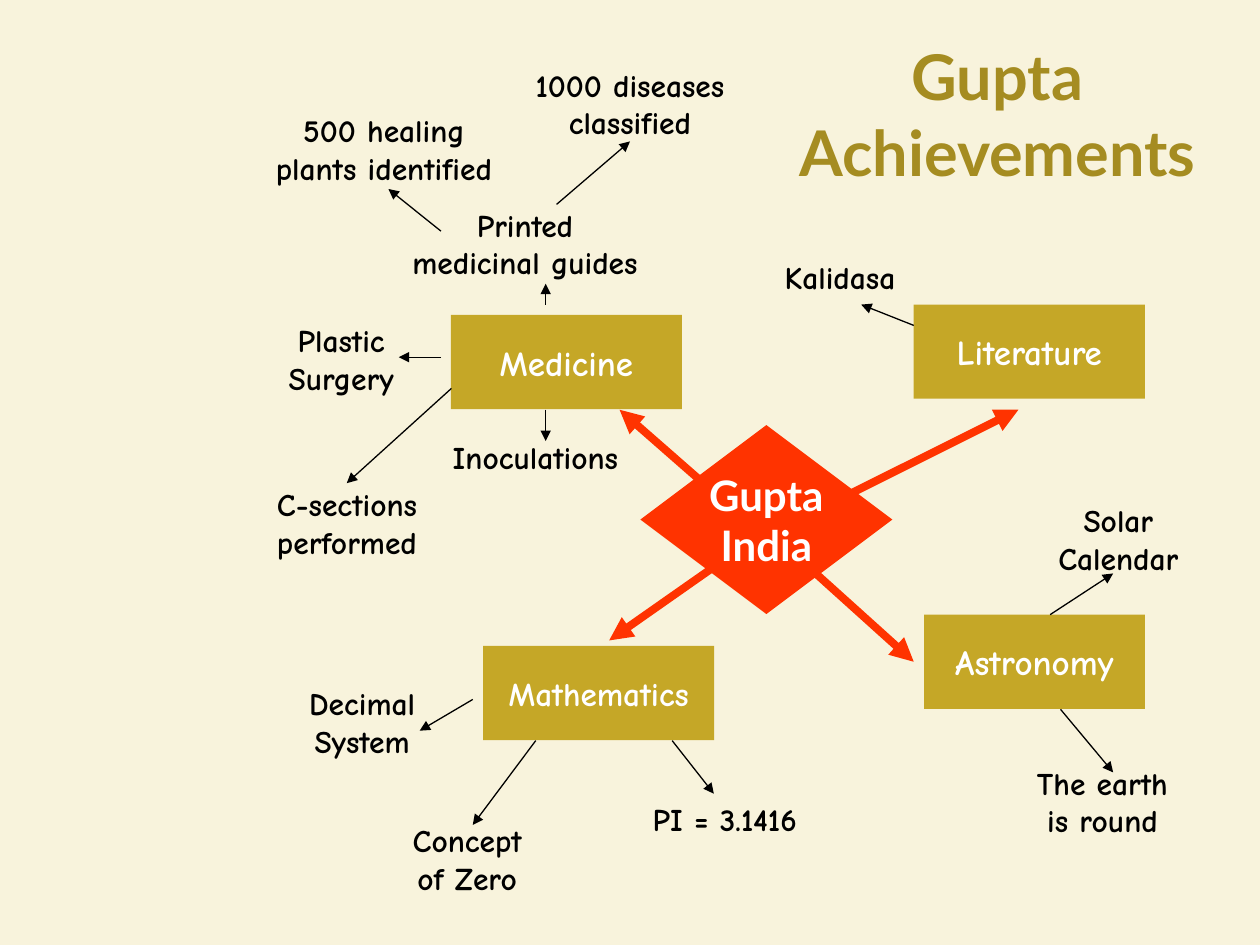
from typing import NamedTuple

from lxml.etree import SubElement
from pptx import Presentation
from pptx.dml.color import RGBColor
from pptx.enum.shapes import MSO_CONNECTOR, MSO_SHAPE
from pptx.enum.text import MSO_ANCHOR, PP_ALIGN
from pptx.oxml.ns import qn
from pptx.util import Cm, Pt

CREAM, GOLD, DARK_GOLD = "F8F3DC", "C5A727", "A58C21"
RED, WHITE, BLACK = "FF3300", "FFFFFF", "000000"
HAND, SANS = "Comic Neue", "Lato"


class Node(NamedTuple):
    """A filled shape; lengths in cm."""
    text: str
    left: float
    top: float
    width: float = 4.66
    height: float = 1.9
    size: int = 20


class Label(NamedTuple):
    """Plain text; its height follows from the number of lines."""
    text: str
    left: float
    top: float
    width: float


class Arrow(NamedTuple):
    x1: float
    y1: float
    x2: float
    y2: float


NODES = [
    Node("Medicine", 9.09, 6.35),
    Node("Literature", 18.42, 6.14),
    Node("Mathematics", 9.74, 13.02, size=19),
    Node("Astronomy", 18.63, 12.39, width=4.45),
]
HUB = Node("Gupta\nIndia", 12.91, 8.57, 5.08, 3.81, 24)

LABELS = [
    Label("Printed\nmedicinal guides", 7.41, 4.02, 6.35),
    Label("1000 diseases\nclassified", 9.95, 1.2, 5.5),
    Label("Plastic\nSurgery", 5.08, 6.35, 3.6),
    Label("C-sections\nperformed", 4.88, 9.65, 4.23),
    Label("Inoculations", 8.68, 8.71, 4.23),
    Label("500 healing\nplants identified", 4.88, 2.11, 5.72),
    Label("Decimal\nSystem", 5.5, 13.67, 3.6),
    Label("Concept\nof Zero", 7.62, 16.43, 3.6),
    Label("PI = 3.1416", 12.28, 16, 4.66),
    Label("Kalidasa", 15.24, 5.08, 3.39),
    Label("Solar\nCalendar", 20.11, 9.98, 4.87),
    Label("The earth\nis round", 20.32, 15.27, 3.81),
]

HUB_ARROWS = [
    Arrow(14.18, 9.74, 12.49, 8.26),
    Arrow(17.15, 9.95, 20.53, 8.26),
    Arrow(16.3, 11.43, 18.42, 13.34),
    Arrow(14.39, 11.43, 12.28, 12.91),
]
DETAIL_ARROWS = [
    # Medicine
    Arrow(11, 6.14, 11, 5.72),
    Arrow(8.89, 4.66, 7.83, 3.81),
    Arrow(11.22, 4.12, 12.7, 2.85),
    Arrow(8.89, 7.2, 8.04, 7.2),
    Arrow(11, 8.26, 11, 8.89),
    Arrow(9.1, 7.83, 6.99, 9.74),
    # Literature
    Arrow(18.42, 6.56, 17.36, 6.14),
    # Astronomy
    Arrow(21.17, 12.39, 22.44, 11.56),
    Arrow(21.38, 14.3, 22.44, 15.57),
    # Mathematics
    Arrow(9.53, 14.1, 8.46, 14.73),
    Arrow(10.8, 14.93, 9.53, 16.63),
    Arrow(13.55, 14.93, 14.39, 16),
]


def color(value: str) -> RGBColor:
    return RGBColor.from_string(value)


def write(tf, text: str, font: str, size: int, hue: str) -> None:
    """Fill a text frame with one centred bold paragraph."""
    p = tf.paragraphs[0]
    p.alignment = PP_ALIGN.CENTER
    p.text = text.replace("\n", "\v")
    for r in p.runs:
        for name, value in dict(name=font, size=Pt(size), bold=True).items():
            setattr(r.font, name, value)
        r.font.color.rgb = color(hue)


def add_node(s, node: Node, kind: MSO_SHAPE, fill: str, font: str) -> None:
    sp = s.shapes.add_shape(kind, *map(Cm, node[1:5]))
    sp.shadow.inherit = False
    sp.fill.solid()
    sp.fill.fore_color.rgb = color(fill)
    sp.line.fill.background()
    tf = sp.text_frame
    tf.word_wrap = False
    tf.vertical_anchor = MSO_ANCHOR.MIDDLE
    write(tf, node.text, font, node.size, WHITE)


def add_label(s, label: Label) -> None:
    height = 1.02 + 0.76 * label.text.count("\n")
    sp = s.shapes.add_textbox(*map(Cm, (*label[1:], height)))
    sp.text_frame.word_wrap = True
    write(sp.text_frame, label.text, HAND, 18, BLACK)


def add_arrow(s, arrow: Arrow, hue: str, width: float) -> None:
    sp = s.shapes.add_connector(MSO_CONNECTOR.STRAIGHT, *map(Cm, arrow))
    sp.line.color.rgb = color(hue)
    sp.line.width = Pt(width)
    SubElement(sp.line._get_or_add_ln(), qn("a:tailEnd"), type="triangle")
    SubElement(sp._element.spPr, qn("a:effectLst"))


def add_title(s, text: str) -> None:
    sp = s.shapes.add_textbox(Cm(15.24), Cm(0.64), Cm(9.74), Cm(3.33))
    tf = sp.text_frame
    tf.word_wrap = True
    write(tf, text, SANS, 36, DARK_GOLD)
    # Soft text shadow, placed right after the text fill
    effects = tf.paragraphs[0].runs[0].font._element
    effects = SubElement(effects, qn("a:effectLst"))
    effects.getprevious().getparent().find(qn("a:solidFill")).addnext(effects)
    shadow = SubElement(effects, qn("a:outerShdw"), blurRad="38100",
                        dist="38100", dir="2700000", algn="tl")
    hue = SubElement(shadow, qn("a:srgbClr"), val=BLACK)
    SubElement(hue, qn("a:alpha"), val="60000")


def main() -> None:
    prs = Presentation()
    prs.slide_width, prs.slide_height = Cm(25.4), Cm(19.05)
    s = prs.slides.add_slide(prs.slide_layouts[6])
    s.background.fill.solid()
    s.background.fill.fore_color.rgb = color(CREAM)

    # Fields and their achievements
    for node in NODES:
        add_node(s, node, MSO_SHAPE.RECTANGLE, GOLD, HAND)
    for label in LABELS:
        add_label(s, label)

    # Arrows, with the hub over the ends of the red ones
    for arrow in DETAIL_ARROWS:
        add_arrow(s, arrow, BLACK, 0.75)
    for arrow in HUB_ARROWS:
        add_arrow(s, arrow, RED, 4.5)
    add_node(s, HUB, MSO_SHAPE.DIAMOND, RED, SANS)

    add_title(s, "Gupta Achievements")
    prs.save("out.pptx")


if __name__ == "__main__":
    main()
